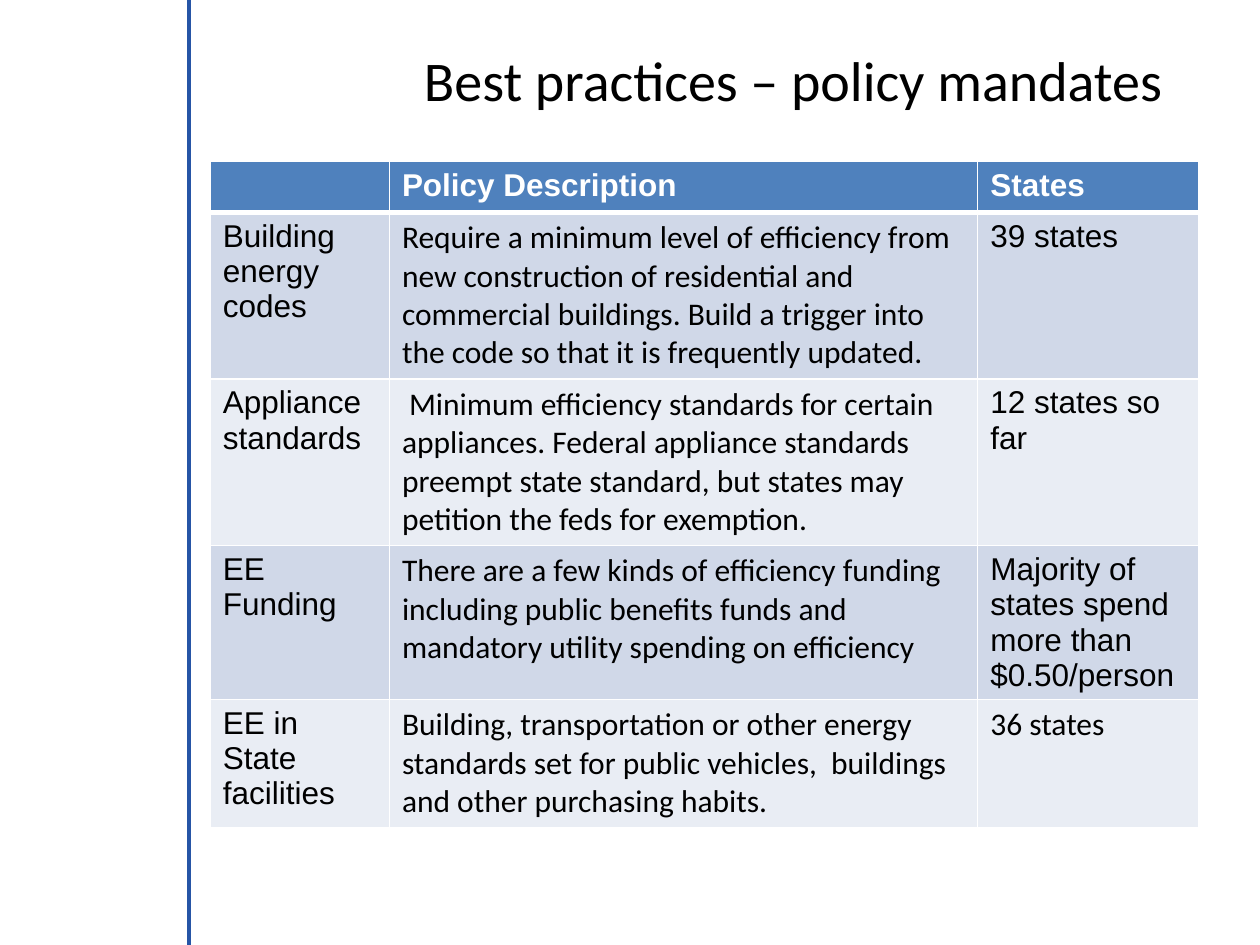
from lxml.etree import SubElement
from pptx import Presentation
from pptx.dml.color import RGBColor
from pptx.enum.shapes import MSO_CONNECTOR as CONN
from pptx.enum.text import MSO_ANCHOR as ANCHOR, PP_ALIGN as ALIGN
from pptx.oxml.ns import qn
from pptx.util import Cm, Pt

COLORS = {
    "rule": "2655A6",
    "header": "4F81BD",
    "odd": "D0D8E8",
    "even": "E9EDF4",
    "white": "FFFFFF",
    "text": "000000",
}
HEADER = ["", "Policy Description", "States"]
POLICIES = [
    ["Building energy codes",
     "Require a minimum level of efficiency from new construction of "
     "residential and commercial buildings. Build a trigger into the code "
     "so that it is frequently updated.",
     "39 states"],
    ["Appliance standards",
     " Minimum efficiency standards for certain appliances. Federal "
     "appliance standards preempt state standard, but states may petition "
     "the feds for exemption.",
     "12 states so far"],
    ["EE Funding",
     "There are a few kinds of efficiency funding including public benefits "
     "funds and mandatory utility spending on efficiency",
     "Majority of states spend more than $0.50/person"],
    ["EE in State facilities",
     "Building, transportation or other energy standards set for public "
     "vehicles,  buildings and other purchasing habits.",
     "36 states"],
]
COL_WIDTHS = [3.61, 11.86, 4.45]
ROW_HEIGHTS = [1, 3.36, 3.36, 3.1, 2.58]


def rgb(name):
    return RGBColor.from_string(COLORS[name])


def add_run(p, text, size, font, color, bold=False):
    r = p.add_run()
    r.text = text
    r.font.size = Pt(size)
    r.font.name = font
    r.font.bold = bold
    r.font.color.rgb = rgb(color)


def add_rule(slide, x, top, height):
    line = slide.shapes.add_connector(
        CONN.STRAIGHT, Cm(x), Cm(top), Cm(x), Cm(top + height))
    line.line.color.rgb = rgb("rule")
    line.line.width = Pt(2)
    SubElement(line._element.spPr, qn("a:effectLst"))


def set_title(slide, left, top, width, height):
    sp = slide.shapes.title
    sp.left, sp.top, sp.width, sp.height = map(Cm, (left, top, width, height))
    tf = sp.text_frame
    tf.vertical_anchor = ANCHOR.MIDDLE
    p = tf.paragraphs[0]
    p.alignment = ALIGN.RIGHT
    add_run(p, "Best practices – policy mandates", 32, "Calibri", "text")


def set_borders(cell, top, bottom):
    tcPr = cell._tc.get_or_add_tcPr()
    for side, width in (("L", 1), ("R", 1), ("T", top), ("B", bottom)):
        ln = SubElement(tcPr, qn(f"a:ln{side}"), w=str(Pt(width)))
        fill = SubElement(ln, qn("a:solidFill"))
        SubElement(fill, qn("a:srgbClr"), val=COLORS["white"])


def add_policy_table(slide, left, top):
    rows = [HEADER] + POLICIES
    table = slide.shapes.add_table(
        len(rows), len(HEADER), Cm(left), Cm(top),
        Cm(sum(COL_WIDTHS)), Cm(sum(ROW_HEIGHTS))).table
    for col, width in zip(table.columns, COL_WIDTHS):
        col.width = Cm(width)
    for row, height in zip(table.rows, ROW_HEIGHTS):
        row.height = Cm(height)
    for i, texts in enumerate(rows):
        is_header = i == 0
        band = "header" if is_header else ("odd" if i % 2 else "even")
        for j, text in enumerate(texts):
            cell = table.cell(i, j)
            set_borders(cell, 3 if i == 1 else 1, 3 if is_header else 1)
            cell.fill.solid()
            cell.fill.fore_color.rgb = rgb(band)
            in_calibri = not is_header and (j == 1 or text == "36 states")
            if text:
                add_run(cell.text_frame.paragraphs[0], text, 18,
                        "Calibri" if in_calibri else "Arial",
                        "white" if is_header else "text", is_header)


def main():
    prs = Presentation()
    prs.slide_width, prs.slide_height = Cm(25.4), Cm(19.05)
    slide = prs.slides.add_slide(prs.slide_layouts[5])
    add_rule(slide, 3.81, 0, 19.05)
    set_title(slide, 0.84, 0, 22.86, 3.18)
    add_policy_table(slide, 4.24, 3.25)
    prs.save("out.pptx")


if __name__ == "__main__":
    main()
